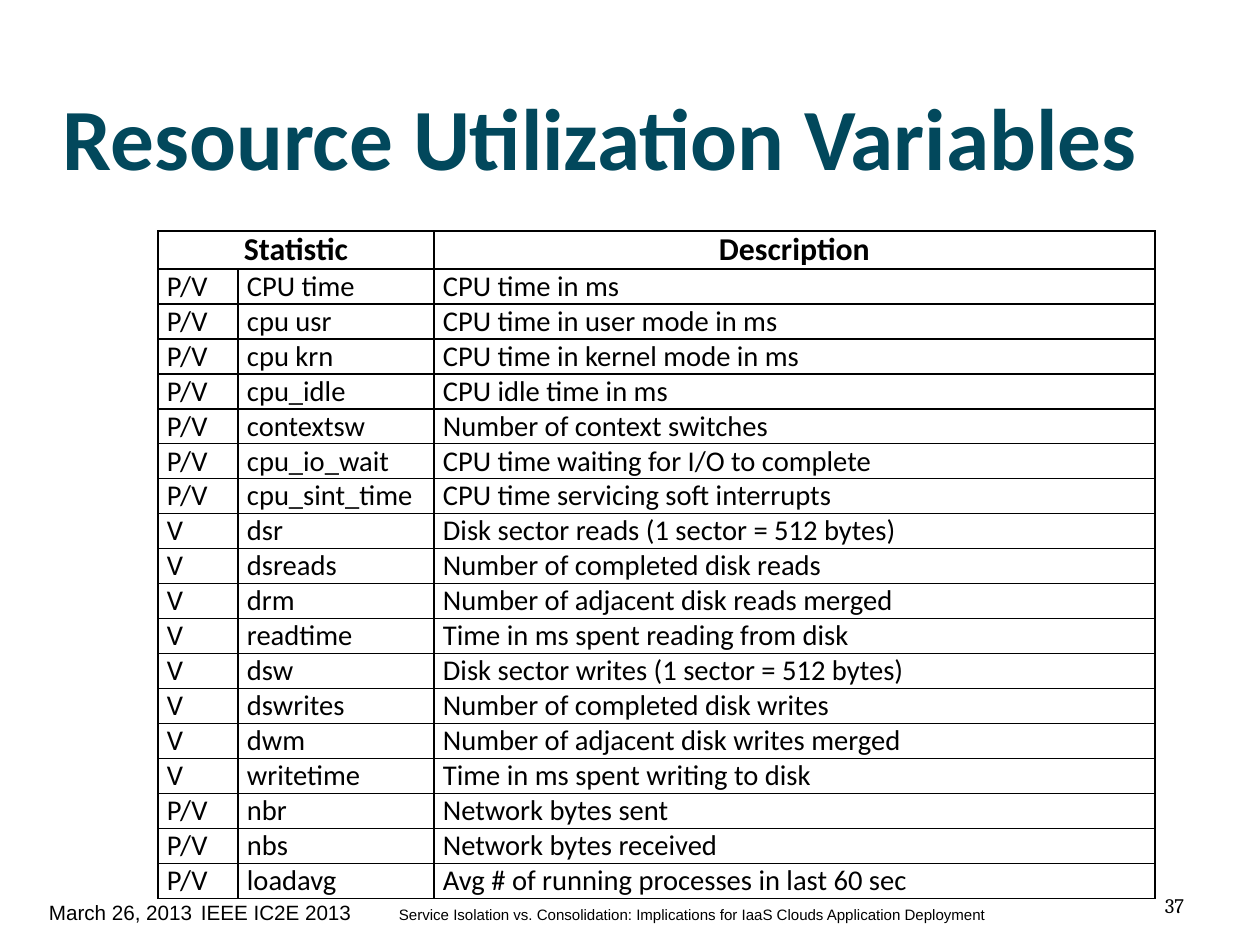
from lxml.etree import SubElement
from pptx import Presentation
from pptx.dml.color import RGBColor
from pptx.enum.text import MSO_ANCHOR as Anchor, MSO_AUTO_SIZE as AutoSize, PP_ALIGN as Align
from pptx.oxml.ns import qn
from pptx.util import Pt

PX = 8000  # EMU per px
BLACK, TEAL = "000000", "02485C"
LINE_SPACING = 0.93

COLUMN_WIDTHS = (80, 196, 721)
HEADER_HEIGHT, ROW_HEIGHT = 38, 35
STATISTICS = [
    ("P/V", "CPU time", "CPU time in ms"),
    ("P/V", "cpu usr", "CPU time in user mode in ms"),
    ("P/V", "cpu krn", "CPU time in kernel mode in ms"),
    ("P/V", "cpu_idle", "CPU idle time in ms"),
    ("P/V", "contextsw", "Number of context switches"),
    ("P/V", "cpu_io_wait", "CPU time waiting for I/O to complete"),
    ("P/V", "cpu_sint_time", "CPU time servicing soft interrupts"),
    ("V", "dsr", "Disk sector reads (1 sector = 512 bytes)"),
    ("V", "dsreads", "Number of completed disk reads"),
    ("V", "drm", "Number of adjacent disk reads merged"),
    ("V", "readtime", "Time in ms spent reading from disk"),
    ("V", "dsw", "Disk sector writes (1 sector = 512 bytes)"),
    ("V", "dswrites", "Number of completed disk writes"),
    ("V", "dwm", "Number of adjacent disk writes merged"),
    ("V", "writetime", "Time in ms spent writing to disk"),
    ("P/V", "nbr", "Network bytes sent"),
    ("P/V", "nbs", "Network bytes received"),
    ("P/V", "loadavg", "Avg # of running processes in last 60 sec"),
]


def px(*lengths):
    return [length * PX for length in lengths]


def color(hex_string):
    return RGBColor.from_string(hex_string)


def set_font(font, name, size, hex_string=BLACK, bold=False):
    font.name, font.size, font.bold = name, Pt(size), bold
    font.color.rgb = color(hex_string)


def set_margins(target, left, top, right, bottom):
    (target.margin_left, target.margin_top,
     target.margin_right, target.margin_bottom) = px(left, top, right, bottom)


def add_frame(page, left, top, width, height):
    frame = page.shapes.add_textbox(*px(left, top, width, height)).text_frame
    frame.word_wrap = True
    frame.vertical_anchor = Anchor.MIDDLE
    return frame


def place_title(page, left, top, width, height):
    title = page.shapes.title
    title.left, title.top, title.width, title.height = px(left, top, width, height)
    frame = title.text_frame
    frame.auto_size = AutoSize.NONE
    frame.vertical_anchor = Anchor.MIDDLE
    set_margins(frame, 0, 7, 0, 0)
    para = frame.paragraphs[0]
    para.text = "Resource Utilization Variables"
    para.alignment = Align.LEFT
    set_font(para.font, "Calibri", 55, TEAL, bold=True)


def add_borders(cell):
    properties = cell._tc.get_or_add_tcPr()
    for side in ("a:lnL", "a:lnR", "a:lnT", "a:lnB"):
        line = SubElement(properties, qn(side), w=str(Pt(1)))
        fill = SubElement(line, qn("a:solidFill"))
        SubElement(fill, qn("a:srgbClr"), val=BLACK)


def format_cell(cell, text, header):
    add_borders(cell)
    cell.fill.background()
    cell.vertical_anchor = Anchor.MIDDLE
    set_margins(cell, 9, 0, 9, 0)
    para = cell.text_frame.paragraphs[0]
    para.text = text
    para.alignment = Align.CENTER if header else Align.JUSTIFY
    para.line_spacing = LINE_SPACING
    set_font(para.font, "Calibri", 20 if header else 18, bold=header)


def add_statistics_table(page, left, top):
    rows = [("Statistic", "", "Description")] + STATISTICS
    heights = [HEADER_HEIGHT] + [ROW_HEIGHT] * len(STATISTICS)
    table = page.shapes.add_table(
        len(rows), len(COLUMN_WIDTHS),
        *px(left, top, sum(COLUMN_WIDTHS), sum(heights))).table
    table.first_row = table.horz_banding = False
    for column, width in zip(table.columns, px(*COLUMN_WIDTHS)):
        column.width = width
    for row, height in zip(table.rows, px(*heights)):
        row.height = height
    for row_index, texts in enumerate(rows):
        for column_index, text in enumerate(texts):
            format_cell(table.cell(row_index, column_index), text, row_index == 0)
    table.cell(0, 0).merge(table.cell(0, 1))


def add_footer(page, left, top, width, height):
    frame = add_frame(page, left, top, width, height)
    set_margins(frame, 0, 0, 0, 0)
    para = frame.paragraphs[0]
    para.line_spacing = LINE_SPACING
    tabs = SubElement(para._p.get_or_add_pPr(), qn("a:tabLst"))
    for position in px(152, 350):
        SubElement(tabs, qn("a:tab"), pos=str(position), algn="l")
    for text, size in (
        ("March 26, 2013\tIEEE IC2E 2013\t", 13),
        ("Service Isolation vs. Consolidation: "
         "Implications for IaaS Clouds Application Deployment", 9.5),
    ):
        span = para.add_run()
        span.text = text
        set_font(span.font, "Arial", size)


def add_page_number(page, left, top, width, height):
    frame = add_frame(page, left, top, width, height)
    set_margins(frame, 13, 7, 13, 7)
    para = frame.paragraphs[0]
    para.text = "37"
    para.alignment = Align.RIGHT
    set_font(para.font, "Cambria", 13)


def main():
    deck = Presentation()
    deck.slide_width, deck.slide_height = px(1260, 945)
    page = deck.slides.add_slide(deck.slide_layouts[5])  # title only
    add_footer(page, 49, 889, 1114, 50)
    place_title(page, 63, 53, 1134, 158)
    add_statistics_table(page, 158, 231)
    add_page_number(page, 840, 881, 357, 48)
    deck.save("out.pptx")


if __name__ == "__main__":
    main()
